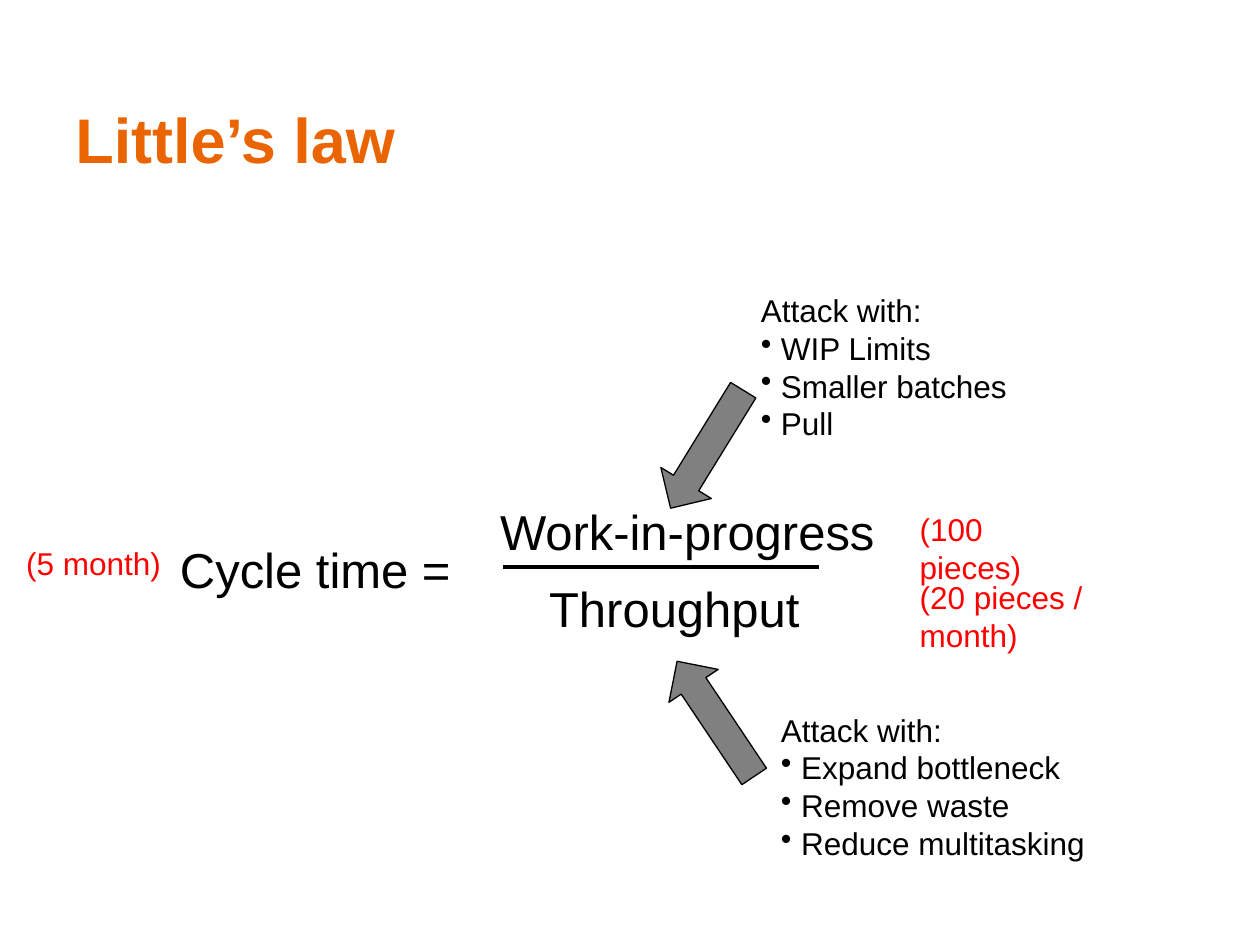
from typing import NamedTuple

from lxml import etree
from pptx import Presentation
from pptx.dml.color import RGBColor
from pptx.enum import shapes, text
from pptx.oxml import ns
from pptx.util import Inches, Pt

BLACK, RED, ORANGE, GRAY = "000000", "FF0000", "EA6502", "808080"
BULLET_INDENT = Inches(0.16)


class Label(NamedTuple):
    words: str
    left: float
    top: float
    width: float
    height: float
    size: int
    color: str = BLACK
    bold: bool = False
    anchor: text.MSO_ANCHOR = text.MSO_ANCHOR.TOP
    bullets: tuple[str, ...] = ()


class Arrow(NamedTuple):
    left: float
    top: float
    rotation: float


LABELS = [
    Label("Little’s law", 0.5, 0.59, 9.13, 1.02, 36, ORANGE, True, text.MSO_ANCHOR.MIDDLE),
    Label("Cycle time =", 1.33, 4.23, 2.38, 0.57, 28),
    Label("Work-in-progress", 3.87, 3.93, 3.21, 0.57, 28),
    Label("Throughput", 4.26, 4.54, 2.22, 0.57, 28),
    Label("Attack with:", 5.94, 2.26, 2.17, 1.31, 18,
          bullets=("WIP Limits", "Smaller batches", "Pull")),
    Label("Attack with:", 6.1, 5.59, 2.63, 1.31, 18,
          bullets=("Expand bottleneck", "Remove waste", "Reduce multitasking")),
    Label("(100 pieces)", 7.2, 4, 1.44, 0.4, 18, RED),
    Label("(20 pieces / month)", 7.2, 4.54, 2.21, 0.4, 18, RED),
    Label("(5 month)", 0.11, 4.27, 1.28, 0.4, 18, RED),
]
ARROWS = [Arrow(5.06, 3.33, 121.6), Arrow(5.13, 5.47, 236.2)]


def rgb(value: str) -> RGBColor:
    return RGBColor.from_string(value)


def add_bullet(para) -> None:
    props = para._p.get_or_add_pPr()
    props.set("marL", str(BULLET_INDENT))
    props.set("indent", str(-BULLET_INDENT))
    etree.SubElement(props, ns.qn("a:buChar"), char="•")


def add_label(page, label: Label) -> None:
    box = page.shapes.add_textbox(
        Inches(label.left), Inches(label.top), Inches(label.width), Inches(label.height))
    frame = box.text_frame
    frame.word_wrap = True
    frame.vertical_anchor = label.anchor
    frame.text = "\n".join((label.words, *label.bullets))
    for index, para in enumerate(frame.paragraphs):
        if index:
            add_bullet(para)
        para.font.name = "Arial"
        para.font.size = Pt(label.size)
        para.font.bold = label.bold
        para.font.color.rgb = rgb(label.color)


def add_arrow(page, arrow: Arrow) -> None:
    shape = page.shapes.add_shape(
        shapes.MSO_SHAPE.RIGHT_ARROW,
        Inches(arrow.left), Inches(arrow.top), Inches(1.1), Inches(0.47))
    shape.rotation = arrow.rotation
    shape.shadow.inherit = False
    shape.fill.solid()
    shape.fill.fore_color.rgb = rgb(GRAY)
    shape.line.color.rgb = rgb(BLACK)
    shape.line.width = Pt(0.75)


def add_fraction_bar(page) -> None:
    bar = page.shapes.add_connector(
        shapes.MSO_CONNECTOR.STRAIGHT, Inches(3.99), Inches(4.5), Inches(6.5), Inches(4.5))
    bar.line.color.rgb = rgb(BLACK)
    bar.line.width = Pt(2.25)
    etree.SubElement(bar._element.spPr, ns.qn("a:effectLst"))


def main() -> None:
    deck = Presentation()
    deck.slide_width, deck.slide_height = Inches(10), Inches(7.5)
    page = deck.slides.add_slide(deck.slide_layouts[6])
    for label in LABELS:
        add_label(page, label)
    add_fraction_bar(page)
    for arrow in ARROWS:
        add_arrow(page, arrow)
    deck.save("out.pptx")


if __name__ == "__main__":
    main()
